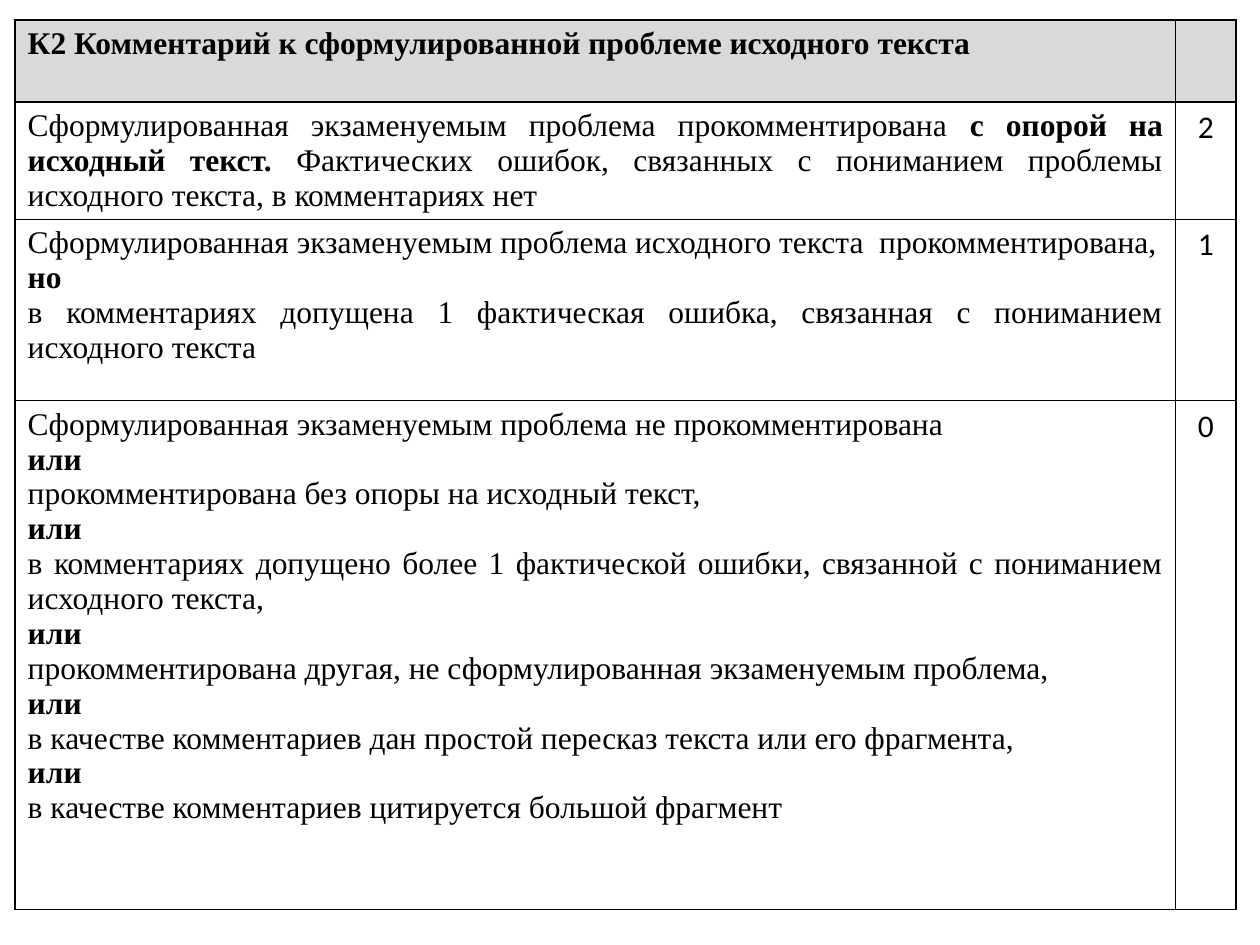
import dataclasses

import pptx
import pptx.dml.color
import pptx.enum.text
import pptx.oxml
import pptx.oxml.ns
import pptx.util

Inches = pptx.util.Inches
Align = pptx.enum.text.PP_ALIGN


@dataclasses.dataclass(frozen=True)
class Theme:
    ink: str = "000000"
    paper: str = "FFFFFF"
    header: str = "D9D9D9"
    body_font: str = "Times New Roman"
    score_font: str = "Calibri"
    size: int = 18
    border: int = 1


class SlideBuilder:
    def __init__(self, deck, theme):
        self.theme = theme
        self.slide = deck.slides.add_slide(deck.slide_layouts[6])

    def table(self, left, top, widths, heights):
        frame = self.slide.shapes.add_table(
            len(heights), len(widths), Inches(left), Inches(top),
            Inches(sum(widths)), Inches(sum(heights)))
        table = frame.table
        table.first_row = table.horz_banding = False
        for column, width in zip(table.columns, widths):
            column.width = Inches(width)
        for row, height in zip(table.rows, heights):
            row.height = Inches(height)
        return table

    def cell(self, cell, paragraphs, fill, font, alignment):
        for index, spans in enumerate(paragraphs):
            frame = cell.text_frame
            para = frame.add_paragraph() if index else frame.paragraphs[0]
            para.alignment = alignment
            for text, bold in spans:
                self.span(para, text, {
                    "name": font, "size": pptx.util.Pt(self.theme.size), "bold": bold})
        self.borders(cell)
        cell.fill.solid()
        cell.fill.fore_color.rgb = pptx.dml.color.RGBColor.from_string(fill)

    def span(self, para, text, format_values):
        span = para.add_run()
        span.text = text
        for name, value in format_values.items():
            setattr(span.font, name, value)
        span.font.color.rgb = pptx.dml.color.RGBColor.from_string(self.theme.ink)

    def borders(self, cell):
        properties = cell._tc.get_or_add_tcPr()
        for side in ("lnL", "lnR", "lnT", "lnB"):
            properties.append(pptx.oxml.parse_xml(
                f'<a:{side} {pptx.oxml.ns.nsdecls("a")} w="{pptx.util.Pt(self.theme.border)}">'
                f'<a:solidFill><a:srgbClr val="{self.theme.ink}"/></a:solidFill></a:{side}>'))


def plain(text):
    return [(text, False)]


def bold(text):
    return [(text, True)]


OR = bold("или")
CRITERIA = [
    ([bold("К2 Комментарий к сформулированной проблеме исходного текста")], ""),
    ([plain("Сформулированная экзаменуемым проблема прокомментирована ")
      + bold("с опорой на исходный текст.")
      + plain(" Фактических ошибок, связанных с пониманием проблемы исходного текста, "
              "в комментариях нет")], "2"),
    ([plain("Сформулированная экзаменуемым проблема исходного текста  прокомментирована,"),
      bold("но"),
      plain("в комментариях допущена 1 фактическая ошибка, связанная с пониманием "
            "исходного текста")], "1"),
    ([plain("Сформулированная экзаменуемым проблема не прокомментирована"),
      OR,
      plain("прокомментирована без опоры на исходный текст,"),
      OR,
      plain("в комментариях допущено более 1 фактической ошибки, связанной с пониманием "
            "исходного текста,"),
      OR,
      plain("прокомментирована другая, не сформулированная экзаменуемым проблема,"),
      OR,
      plain("в качестве комментариев дан простой пересказ текста или его фрагмента,"),
      OR,
      plain("в качестве комментариев цитируется большой фрагмент")], "0"),
]


def main():
    deck = pptx.Presentation()
    deck.slide_width, deck.slide_height = Inches(10), Inches(7.5)
    theme = Theme()
    page = SlideBuilder(deck, theme)
    table = page.table(0.12, 0.16, [9.21, 0.48], [0.65, 0.93, 1.44, 4.04])
    for index, (paragraphs, score) in enumerate(CRITERIA):
        fill = theme.paper if index else theme.header
        alignment = Align.JUSTIFY if index else Align.LEFT
        page.cell(table.cell(index, 0), paragraphs, fill, theme.body_font, alignment)
        scores = [plain(score)] if score else []
        page.cell(table.cell(index, 1), scores, fill, theme.score_font, Align.CENTER)
    deck.save("out.pptx")


if __name__ == "__main__":
    main()
